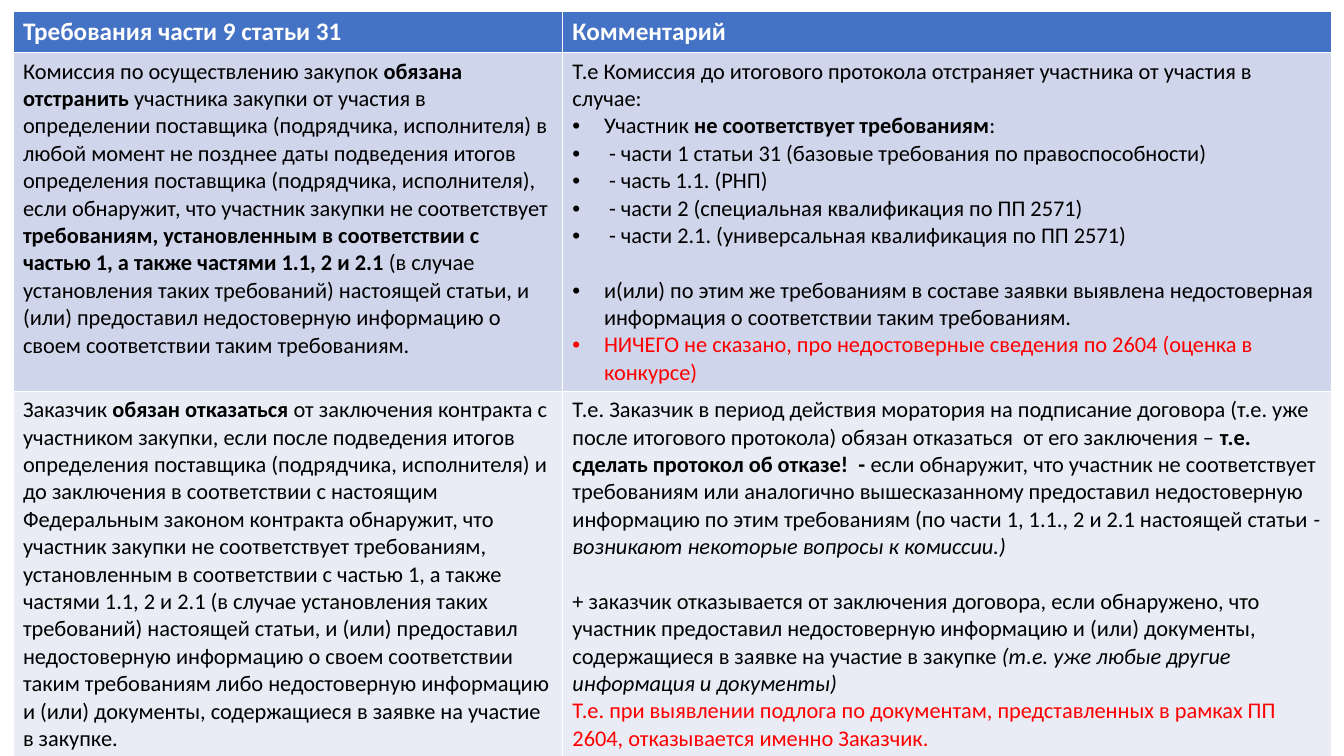
from lxml.etree import SubElement
from pptx import Presentation
from pptx.dml.color import RGBColor
from pptx.oxml.ns import qn
from pptx.util import Pt

FONT = "Calibri"
BLACK, WHITE, RED = "000000", "FFFFFF", "FF0000"
BOLD, ITALIC, ALERT = {"bold": True}, {"italic": True}, {"color": RED}
BULLET, GAP = {"bullet": True}, {"before": 19.5}

# A cell is a list of paragraphs: (runs, paragraph format); a run is (text, format).
HEADER = ["Требования части 9 статьи 31", "Комментарий"]
EXCLUSION_RULE = [
    ([("Комиссия по осуществлению закупок ", {}),
      ("обязана отстранить ", BOLD),
      ("участника закупки от участия в определении поставщика (подрядчика, исполнителя) в любой "
       "момент не позднее даты подведения итогов определения поставщика (подрядчика, исполнителя), "
       "если обнаружит, что участник закупки не соответствует ", {}),
      ("требованиям, установленным в соответствии с частью 1, а также частями 1.1, 2 и 2.1 ", BOLD),
      ("(в случае установления таких требований) настоящей статьи, и (или) предоставил "
       "недостоверную информацию о своем соответствии таким требованиям.", {})], {}),
]
EXCLUSION_COMMENT = [
    ([("Т.е Комиссия до итогового протокола отстраняет участника от участия в случае:", {})], {}),
    ([("Участник ", {}), ("не соответствует требованиям", BOLD), (":", {})], BULLET),
    ([(" - части 1 статьи 31 (базовые требования по правоспособности)", {})], BULLET),
    ([(" - часть 1.1. (РНП)", {})], BULLET),
    ([(" - части 2 (специальная квалификация по ПП 2571)", {})], BULLET),
    ([(" - части 2.1. (универсальная квалификация по ПП 2571)", {})], BULLET),
    ([("и(или) по этим же требованиям в составе заявки выявлена недостоверная информация "
       "о соответствии таким требованиям.", {})], BULLET | GAP),
    ([("НИЧЕГО не сказано, про недостоверные сведения по 2604 (оценка в конкурсе)", ALERT)], BULLET),
]
REFUSAL_RULE = [
    ([("Заказчик ", {}),
      ("обязан отказаться", BOLD),
      (" от заключения контракта с участником закупки, если после подведения итогов определения "
       "поставщика (подрядчика, исполнителя) и до заключения в соответствии с настоящим Федеральным "
       "законом контракта обнаружит, что участник закупки не соответствует требованиям, "
       "установленным в соответствии с частью 1, а также частями 1.1, 2 и 2.1 (в случае "
       "установления таких требований) настоящей статьи, и (или) предоставил недостоверную "
       "информацию о своем соответствии таким требованиям либо недостоверную информацию и (или) "
       "документы, содержащиеся в заявке на участие в закупке.", {})], {}),
]
REFUSAL_COMMENT = [
    ([("Т.е. Заказчик в период действия моратория на подписание договора (т.е. уже после итогового "
       "протокола) обязан отказаться  от его заключения – ", {}),
      ("т.е. сделать протокол об отказе!  - ", BOLD),
      ("если обнаружит, что участник не соответствует требованиям или аналогично вышесказанному "
       "предоставил недостоверную информацию по этим требованиям (по части 1, 1.1., 2 и 2.1 "
       "настоящей статьи ", {}),
      ("- возникают некоторые вопросы к комиссии.)", ITALIC)], {}),
    ([("+ заказчик отказывается от заключения договора, если обнаружено, что участник предоставил "
       "недостоверную информацию и (или) документы, содержащиеся в заявке на участие в закупке ", {}),
      ("(т.е. уже любые другие информация и документы)", ITALIC)], GAP),
    ([("Т.е. при выявлении подлога по документам, представленных в рамках ПП 2604, "
       "отказывается именно Заказчик.", ALERT)], {}),
]
HEADER_FORMAT = {"size": 18, "bold": True, "color": WHITE}
# Each row: height, fill, cells.
ROWS = [
    (29.5, "4472C4", [[([(title, HEADER_FORMAT)], {})] for title in HEADER]),
    (241.5, "CFD5EA", [EXCLUSION_RULE, EXCLUSION_COMMENT]),
    (260, "E9EBF5", [REFUSAL_RULE, REFUSAL_COMMENT]),
]
LEFT, TOP = 9.25, 8.25
COLUMN_WIDTHS = [392.5, 549.5]
INDENT = 22.5


def rgb(value):
    return RGBColor.from_string(value)


def add_text(p, text, size=16, color=BLACK, bold=False, italic=False):
    r = p.add_run()
    r.text = text
    font = r.font
    font.name, font.size, font.bold, font.italic = FONT, Pt(size), bold, italic
    font.color.rgb = rgb(color)


def add_bullet(p):
    pPr = p._p.get_or_add_pPr()
    pPr.set("marL", str(Pt(INDENT)))
    pPr.set("indent", str(-Pt(INDENT)))
    SubElement(pPr, qn("a:buFont")).set("typeface", "Arial")
    SubElement(pPr, qn("a:buChar")).set("char", "•")


def fill_cell(cell, paragraphs, fill):
    cell.fill.solid()
    cell.fill.fore_color.rgb = rgb(fill)
    tf = cell.text_frame
    for i, (runs, layout) in enumerate(paragraphs):
        p = tf.add_paragraph() if i else tf.paragraphs[0]
        if layout.get("bullet"):
            add_bullet(p)
        if "before" in layout:
            p.space_before = Pt(layout["before"])
        for text, style in runs:
            add_text(p, text, **style)


def main():
    prs = Presentation()
    prs.slide_width, prs.slide_height = Pt(960), Pt(540)
    s = prs.slides.add_slide(prs.slide_layouts[6])
    height = sum(row[0] for row in ROWS)
    table = s.shapes.add_table(len(ROWS), len(COLUMN_WIDTHS), Pt(LEFT), Pt(TOP),
                               Pt(sum(COLUMN_WIDTHS)), Pt(height)).table
    for column, width in zip(table.columns, COLUMN_WIDTHS):
        column.width = Pt(width)
    for row, (row_height, fill, cells) in zip(table.rows, ROWS):
        row.height = Pt(row_height)
        for cell, paragraphs in zip(row.cells, cells):
            fill_cell(cell, paragraphs, fill)
    prs.save("out.pptx")


if __name__ == "__main__":
    main()
